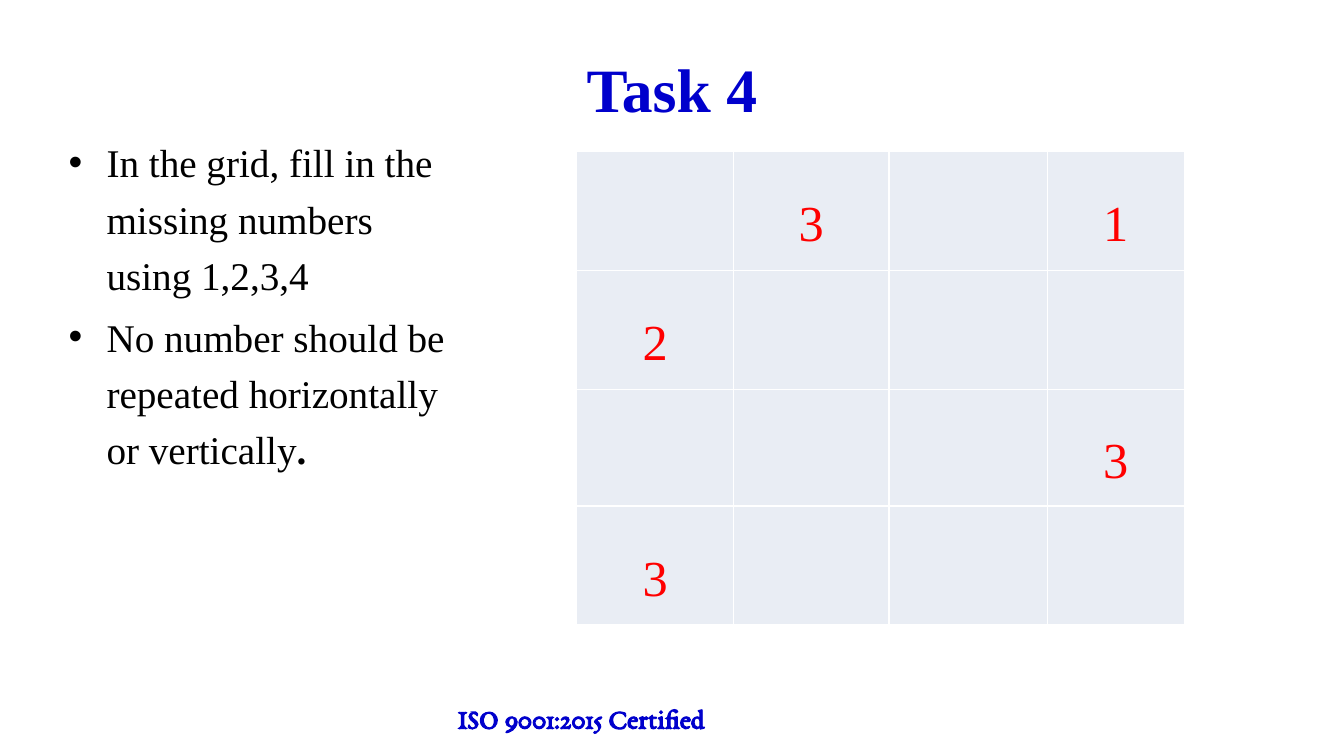
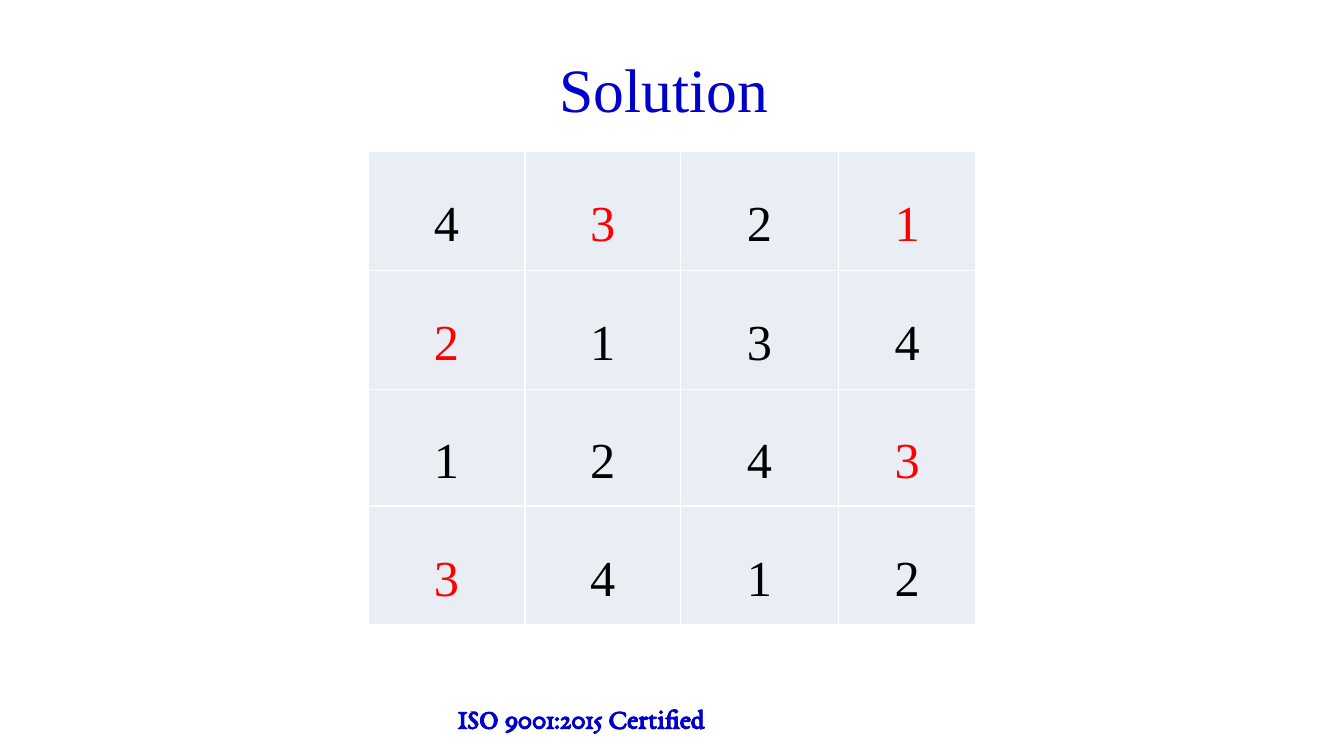
from lxml import etree
from pptx import Presentation
from pptx.dml.color import RGBColor
from pptx.enum.text import MSO_ANCHOR, PP_ALIGN
from pptx.oxml.ns import qn
from pptx.util import Pt

CENTER = PP_ALIGN.CENTER
TOP, MIDDLE = MSO_ANCHOR.TOP, MSO_ANCHOR.MIDDLE

BLUE = RGBColor(0x00, 0x00, 0xCC)
RED = RGBColor(0xFF, 0x00, 0x00)
BLACK = RGBColor(0x00, 0x00, 0x00)
WHITE = RGBColor(0xFF, 0xFF, 0xFF)
PALE_BLUE = RGBColor(0xE9, 0xED, 0xF4)

SERIF = "Times New Roman"
TITLE_FONT = {"name": SERIF, "size": Pt(44), "color": BLUE}
BODY_FONT = {"name": SERIF, "size": Pt(28), "color": BLACK}
DIGIT_FONT = {"name": SERIF, "size": Pt(36)}
FOOTER_FONT = {"name": "EB Garamond", "size": Pt(20), "color": BLUE, "bold": True}

BULLET_FORMAT = {"line_spacing": 1.2}
DIGIT_FORMAT = {"alignment": CENTER, "line_spacing": 1.5, "space_after": Pt(8)}
CELL_FORMAT = {
    "vertical_anchor": MIDDLE,
    "margin_left": Pt(5), "margin_right": Pt(5),
    "margin_top": 0, "margin_bottom": 0,
}

COLUMN_WIDTHS = (112, 111, 113, 98)
ROW_HEIGHTS = (85, 85, 83.5, 85)
GRID_TOP = 108
SOLUTION = ("4321", "2134", "1243", "3412")
CLUES = {(0, 1), (0, 3), (1, 0), (2, 3), (3, 0)}


def set_values(target, values):
    for name, value in values.items():
        setattr(target, name, value)


def add_span(para, text, style):
    span = para.add_run()
    span.text = text
    for name, value in style.items():
        if name == "color":
            span.font.color.rgb = value
        else:
            setattr(span.font, name, value)


def add_bullet(para, indent, hanging):
    properties = para._p.get_or_add_pPr()
    properties.set("marL", str(Pt(indent)))
    properties.set("indent", str(-Pt(hanging)))
    color = etree.SubElement(properties, qn("a:buClr"))
    etree.SubElement(color, qn("a:srgbClr"), val=str(BLACK))
    etree.SubElement(properties, qn("a:buFont"), typeface="Arial")
    etree.SubElement(properties, qn("a:buChar"), char="•")


def add_borders(cell, color, width):
    properties = cell._tc.get_or_add_tcPr()
    for side in ("lnL", "lnR", "lnT", "lnB"):
        line = etree.SubElement(properties, qn(f"a:{side}"), w=str(Pt(width)))
        fill = etree.SubElement(line, qn("a:solidFill"))
        etree.SubElement(fill, qn("a:srgbClr"), val=str(color))


class PuzzleDeck:
    def __init__(self):
        self.deck = Presentation()
        self.deck.slide_width, self.deck.slide_height = Pt(960), Pt(540)
        self.page = None

    def add_page(self, title, **title_style):
        """Start a slide with the shared footer and title."""
        self.page = self.deck.slides.add_slide(self.deck.slide_layouts[6])
        footer = self.add_box(320, 497, 498, 32)
        add_span(footer.paragraphs[0], "ISO 9001:2015 Certified", FOOTER_FONT)
        heading = self.add_box(48, 18, 864, 90, MIDDLE).paragraphs[0]
        heading.alignment = CENTER
        add_span(heading, title, {**TITLE_FONT, **title_style})

    def add_box(self, left, top, width, height, anchor=TOP):
        """Add a wrapping text box and return its text frame."""
        box = self.page.shapes.add_textbox(Pt(left), Pt(top), Pt(width), Pt(height))
        set_values(box.text_frame, {"word_wrap": True, "vertical_anchor": anchor})
        return box.text_frame

    def add_bullets(self, left, top, width, height, items):
        """Each item is a list of (text, style changes) spans."""
        frame = self.add_box(left, top, width, height)
        for index, spans in enumerate(items):
            para = frame.add_paragraph() if index else frame.paragraphs[0]
            add_bullet(para, indent=36, hanging=27)
            set_values(para, BULLET_FORMAT)
            if index:
                para.space_before = Pt(3.6)
            for text, changes in spans:
                add_span(para, text, {**BODY_FONT, **changes})

    def add_grid(self, left, solved):
        """Draw the number grid: clues only, or every digit when solved."""
        table = self.page.shapes.add_table(
            len(ROW_HEIGHTS), len(COLUMN_WIDTHS), Pt(left), Pt(GRID_TOP),
            Pt(sum(COLUMN_WIDTHS)), Pt(sum(ROW_HEIGHTS))).table
        set_values(table, {"first_row": False, "horz_banding": False})
        for column, width in zip(table.columns, COLUMN_WIDTHS):
            column.width = Pt(width)
        for row, height in zip(table.rows, ROW_HEIGHTS):
            row.height = Pt(height)
        for row, digits in enumerate(SOLUTION):
            for column, digit in enumerate(digits):
                cell = table.cell(row, column)
                set_values(cell, CELL_FORMAT)
                add_borders(cell, WHITE, 1)
                cell.fill.solid()
                cell.fill.fore_color.rgb = PALE_BLUE
                is_clue = (row, column) in CLUES
                if is_clue or solved:
                    para = cell.text_frame.paragraphs[0]
                    set_values(para, DIGIT_FORMAT)
                    add_span(para, digit, {**DIGIT_FONT, "color": RED if is_clue else BLACK})


def main():
    puzzle = PuzzleDeck()

    puzzle.add_page("Task 4", bold=True)
    puzzle.add_bullets(33, 88.6, 303, 388, [
        [("In the grid, fill in the missing numbers using 1,2,3,4", {})],
        [("No number should be repeated horizontally or vertically", {}),
         (".", {"bold": True})],
    ])
    puzzle.add_grid(412, solved=False)

    puzzle.add_page("Solution ")
    puzzle.add_grid(263, solved=True)

    puzzle.deck.save("out.pptx")


if __name__ == "__main__":
    main()
